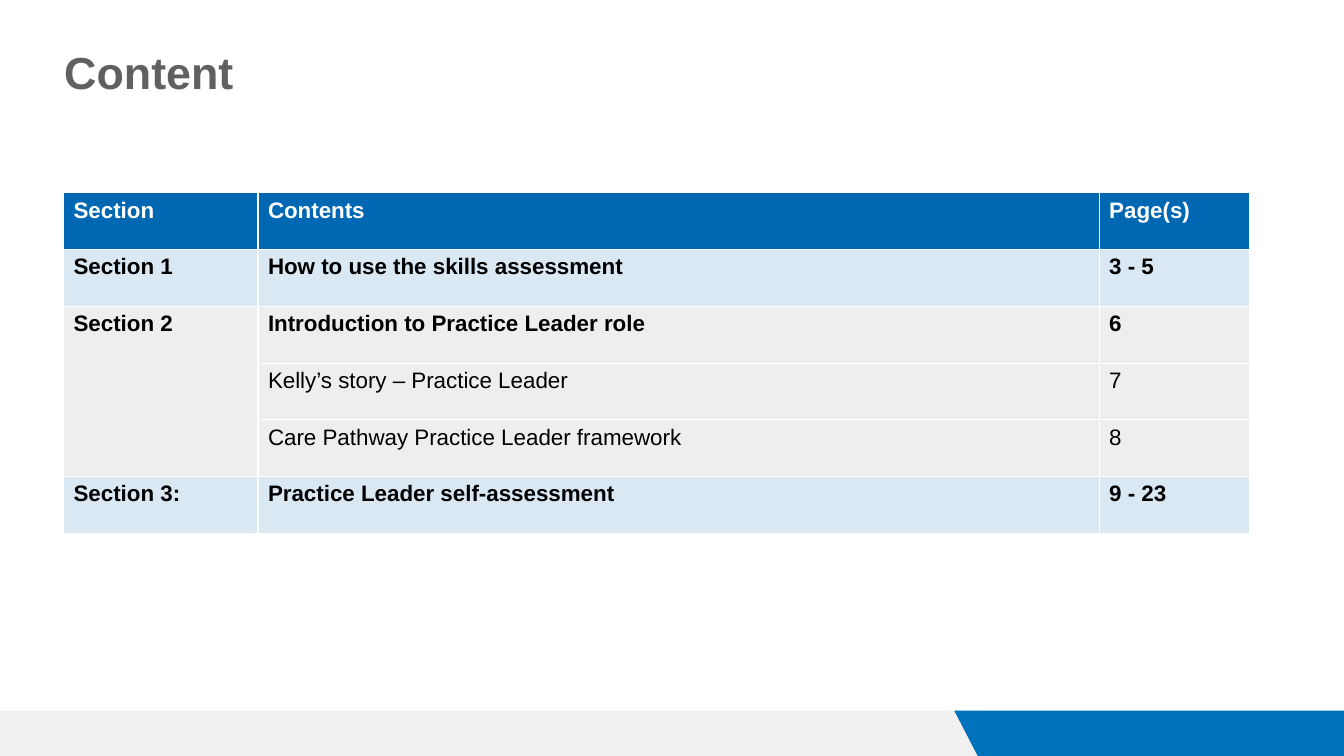
from lxml.etree import SubElement as Sub
from pptx import Presentation
from pptx.dml.color import RGBColor as Rgb
from pptx.enum.text import MSO_ANCHOR as Anchor
from pptx.oxml.ns import qn
from pptx.util import Cm, Pt

WIDE, HIGH = 33.87, 19.05
BAR = 17.91
BLUE, GREY, WHITE, BLACK = "0068B3", "CACACA", "FFFFFF", "000000"
COLS = [4.9, 21.2, 3.8]
ROW = 1.43
HEAD = (BLUE, 100, WHITE, True)
TINT = (BLUE, 15, BLACK, True)
PALE = (GREY, 30, BLACK, True)
PLAIN = (GREY, 30, BLACK, False)
ROWS = [
    (HEAD, ["Section", "Contents", "Page(s)"]),
    (TINT, ["Section 1", "How to use the skills assessment", "3 - 5"]),
    (PALE, ["Section 2", "Introduction to Practice Leader role", "6"]),
    (PLAIN, ["", "Kelly’s story – Practice Leader", "7"]),
    (PLAIN, ["", "Care Pathway Practice Leader framework", "8"]),
    (TINT, ["Section 3:", "Practice Leader self-assessment", "9 - 23"]),
]


def paint(fill, tone, alpha=100):
    fill.solid()
    fill.fore_color.rgb = Rgb.from_string(tone)
    if alpha < 100:
        color = fill._xPr.find(qn("a:solidFill")).find(qn("a:srgbClr"))
        Sub(color, qn("a:alpha"), val=str(alpha * 1000))


def style(para, size, tone, bold):
    font = para.font
    font.name, font.size, font.bold = "Arial", Pt(size), bold
    font.color.rgb = Rgb.from_string(tone)


def add_band(slide, points, tone, alpha=100):
    start, *rest = [(Cm(x), Cm(y)) for x, y in points]
    pen = slide.shapes.build_freeform(*start)
    pen.add_line_segments(rest, close=True)
    band = pen.convert_to_shape()
    band.shadow.inherit = False
    band.line.fill.background()
    paint(band.fill, tone, alpha)


def add_title(slide, text):
    box = slide.shapes.add_textbox(Cm(1.37), Cm(0.99), Cm(24.74), Cm(1.96))
    frame = box.text_frame
    frame.word_wrap = True
    frame.vertical_anchor = Anchor.TOP
    frame.text = text
    style(frame.paragraphs[0], 32, "606060", True)


def add_edges(cell):
    props = cell._tc.get_or_add_tcPr()
    for side in ("lnL", "lnR", "lnT", "lnB"):
        edge = Sub(props, qn(f"a:{side}"), w=str(Pt(1)))
        Sub(Sub(edge, qn("a:solidFill")), qn("a:srgbClr"), val=WHITE)


def add_grid(slide):
    shape = slide.shapes.add_table(
        len(ROWS), len(COLS), Cm(1.6), Cm(4.86), Cm(sum(COLS)), Cm(ROW * len(ROWS)))
    table = shape.table
    for col, width in zip(table.columns, COLS):
        col.width = Cm(width)
    for i, ((tone, alpha, ink, bold), texts) in enumerate(ROWS):
        table.rows[i].height = Cm(ROW)
        for j, text in enumerate(texts):
            cell = table.cell(i, j)
            cell.text = text
            style(cell.text_frame.paragraphs[0], 16, ink, bold)
            add_edges(cell)
            paint(cell.fill, tone, alpha)
    table.cell(2, 0).merge(table.cell(4, 0))


def main():
    deck = Presentation()
    deck.slide_width, deck.slide_height = Cm(WIDE), Cm(HIGH)
    slide = deck.slides.add_slide(deck.slide_layouts[6])
    add_band(slide, [(0, BAR), (24.79, BAR), (25.37, HIGH), (0, HIGH)], GREY, 25)
    add_band(slide, [(24.05, BAR), (WIDE, BAR), (WIDE, HIGH), (24.64, HIGH)], "0071BB")
    add_title(slide, "Content")
    add_grid(slide)
    deck.save("out.pptx")


if __name__ == "__main__":
    main()
